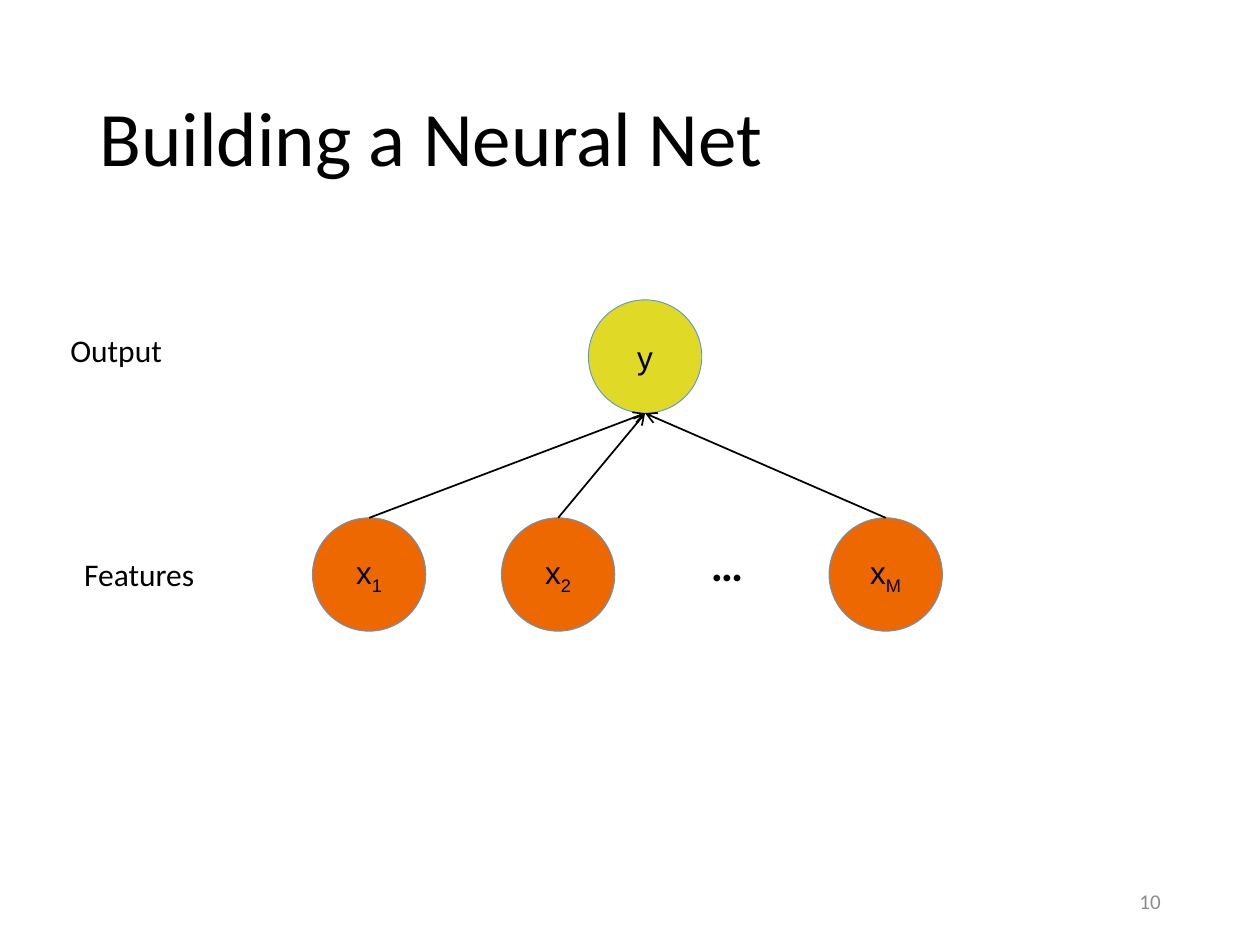
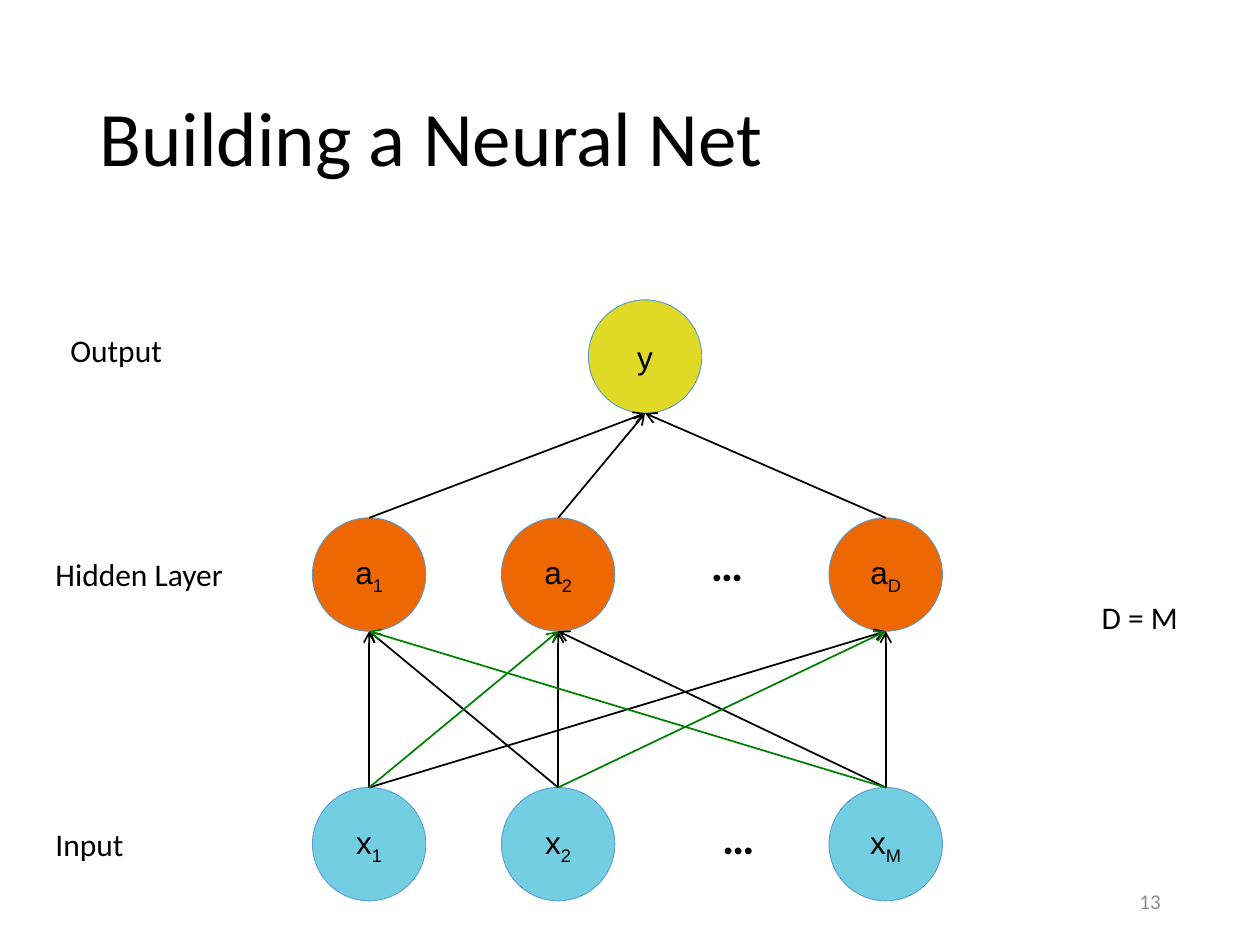
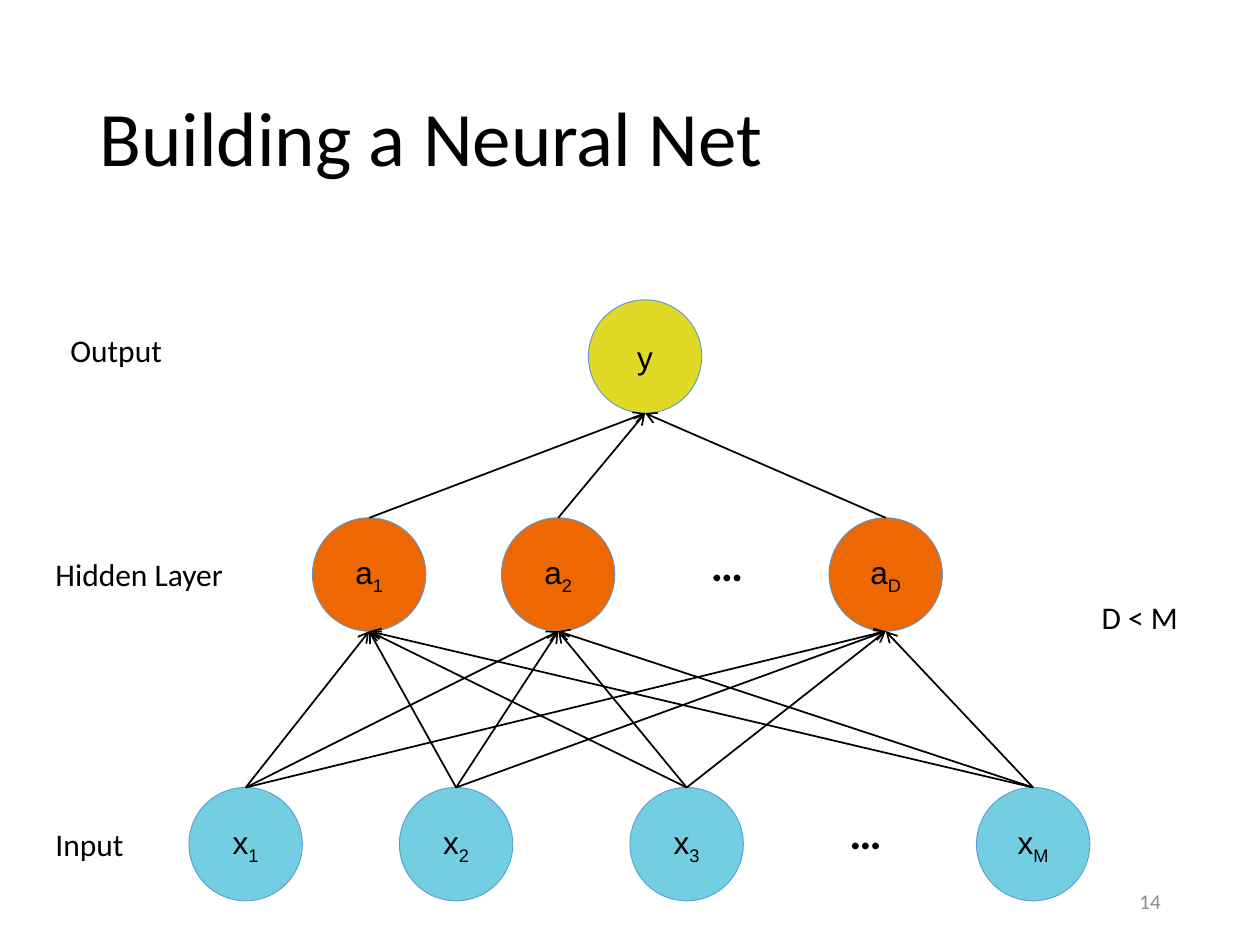
from collections import namedtuple
from itertools import product

from lxml import etree
from pptx import Presentation
from pptx.dml.color import RGBColor
from pptx.enum import shapes, text
from pptx.oxml import ns
from pptx.util import Inches, Pt

COLORS = {
    "ink": "000000", "number": "8C8C8C", "green": "008000",
    "output": "E0D925", "hidden": "EE6802", "input": "72CEE0",
    "rim": "5698D3", "input_rim": "5B9BD5",
}
NODE = 0.9
SUBSCRIPT = "-25000"
ALIGN, ANCHOR = text.PP_ALIGN, text.MSO_ANCHOR

Box = namedtuple("Box", "left top width height")
# Offsets of nodes and of the dots are measured from the layer's box.
Layer = namedtuple("Layer", "box symbol marks offsets dots fill rim")

TITLE = Box(0.69, 0.4, 8.62, 1.45)
PAGE_NUMBER = Box(7.06, 6.95, 2.25, 0.4)
OUTPUT_LABEL = Box(0.46, 2.58, 1.42, 0.4)
MIDDLE_LABEL = Box(-0.02, 4.36, 2.25, 0.4)
INPUT_LABEL = Box(0, 6.5, 1.42, 0.4)
SIZE_NOTE = Box(7.92, 4.7, 2.25, 0.4)

TRIO = (0, 1.5, 4.1)
OUTPUT = Layer(Box(4.67, 2.38, NODE, NODE), "y", [""], [0], None, "output", "rim")


def middle_layer(symbol, last):
    return Layer(Box(2.48, 4.11, 5, NODE), symbol, ["1", "2", last], TRIO,
                 (3, 0.09), "hidden", "rim")


def input_layer(left, width, marks, offsets, dots):
    return Layer(Box(left, 6.25, width, NODE), "x", marks, offsets, dots,
                 "input", "input_rim")


def inches(*lengths):
    return [Inches(length) for length in lengths]


def rgb(name):
    return RGBColor.from_string(COLORS[name])


def set_font(font, color="ink", **values):
    """Apply format values such as name, size and bold to a font."""
    font.color.rgb = rgb(color)
    for key, value in values.items():
        setattr(font, key, value)


def add_text(slide, box, words, size=18, align=ALIGN.CENTER, anchor=ANCHOR.TOP,
             spacing=1.0, color="ink", bold=False):
    frame = slide.shapes.add_textbox(*inches(*box)).text_frame
    frame.word_wrap = True
    frame.vertical_anchor = anchor
    paragraph = frame.paragraphs[0]
    paragraph.alignment = align
    paragraph.line_spacing = spacing
    run = paragraph.add_run()
    run.text = words
    set_font(run.font, color, name="Calibri", size=Pt(size), bold=bold)


def add_node(slide, box, layer, mark):
    node = slide.shapes.add_shape(shapes.MSO_SHAPE.FLOWCHART_CONNECTOR, *inches(*box))
    node.shadow.inherit = False
    node.fill.solid()
    node.fill.fore_color.rgb = rgb(layer.fill)
    node.line.color.rgb = rgb(layer.rim)
    node.line.width = Pt(0.5)
    frame = node.text_frame
    frame.word_wrap = False
    frame.vertical_anchor = ANCHOR.MIDDLE
    paragraph = frame.paragraphs[0]
    paragraph.alignment = ALIGN.CENTER
    for words in filter(None, (layer.symbol, mark)):
        run = paragraph.add_run()
        run.text = words
        set_font(run.font, name="Arial", size=Pt(18))
    if mark:
        run._r.get_or_add_rPr().set("baseline", SUBSCRIPT)


def add_layer(slide, layer):
    left, top = layer.box.left, layer.box.top
    for offset, mark in zip(layer.offsets, layer.marks):
        add_node(slide, Box(left + offset, top, NODE, NODE), layer, mark)
    if layer.dots:
        right, down = layer.dots
        add_text(slide, Box(left + right, top + down, 0.58, 0.54), "…", size=26,
                 anchor=ANCHOR.MIDDLE, bold=True)


def add_arrow(slide, start, end, color):
    arrow = slide.shapes.add_connector(shapes.MSO_CONNECTOR.STRAIGHT,
                                       *inches(*start, *end))
    arrow.line.color.rgb = rgb(color)
    arrow.line.width = Pt(1)
    etree.SubElement(arrow.line._get_or_add_ln(), ns.qn("a:tailEnd"), type="arrow")
    etree.SubElement(arrow._element.spPr, ns.qn("a:effectLst"))


def connect(slide, lower, upper, green=()):
    """Link every node of the lower layer to every node of the upper one."""
    def center(layer, index):
        return layer.box.left + layer.offsets[index] + NODE / 2

    pairs = product(range(len(lower.offsets)), range(len(upper.offsets)))
    for pair in sorted(pairs, key=lambda link: link in green):
        add_arrow(slide, (center(lower, pair[0]), lower.box.top),
                  (center(upper, pair[1]), upper.box.top + NODE),
                  "green" if pair in green else "ink")


def add_net_slide(deck, number, layers, labels, green=()):
    """Layers run from the output down; green holds (input, hidden) index pairs."""
    slide = deck.slides.add_slide(deck.slide_layouts[6])
    add_text(slide, TITLE, "Building a Neural Net", size=44, align=ALIGN.LEFT,
             anchor=ANCHOR.MIDDLE, spacing=0.9)
    for layer in layers:
        add_layer(slide, layer)
    for upper, lower in zip(layers, layers[1:]):
        connect(slide, lower, upper, green if lower.fill == "input" else ())
    add_text(slide, OUTPUT_LABEL, "Output", align=ALIGN.LEFT)
    for box, words in labels:
        add_text(slide, box, words)
    add_text(slide, PAGE_NUMBER, str(number), size=12, align=ALIGN.RIGHT,
             anchor=ANCHOR.MIDDLE, color="number")


def hidden_labels(note):
    return [(INPUT_LABEL, "Input"), (MIDDLE_LABEL, "Hidden Layer"), (SIZE_NOTE, note)]


def main():
    deck = Presentation()
    deck.slide_width, deck.slide_height = inches(10, 7.5)
    hidden = middle_layer("a", "D")
    equal_inputs = input_layer(2.48, 5, ["1", "2", "M"], TRIO, (3.09, 0.12))
    more_inputs = input_layer(1.5, 7.15, ["1", "2", "3", "M"],
                              (0, 1.67, 3.5, 6.25), (5.08, 0.08))

    add_net_slide(deck, 10, [OUTPUT, middle_layer("x", "M")],
                  [(MIDDLE_LABEL, "Features")])
    add_net_slide(deck, 13, [OUTPUT, hidden, equal_inputs], hidden_labels("D = M"),
                  green={(0, 1), (1, 2), (2, 0)})
    add_net_slide(deck, 14, [OUTPUT, hidden, more_inputs], hidden_labels("D < M"))
    deck.save("out.pptx")


if __name__ == "__main__":
    main()
